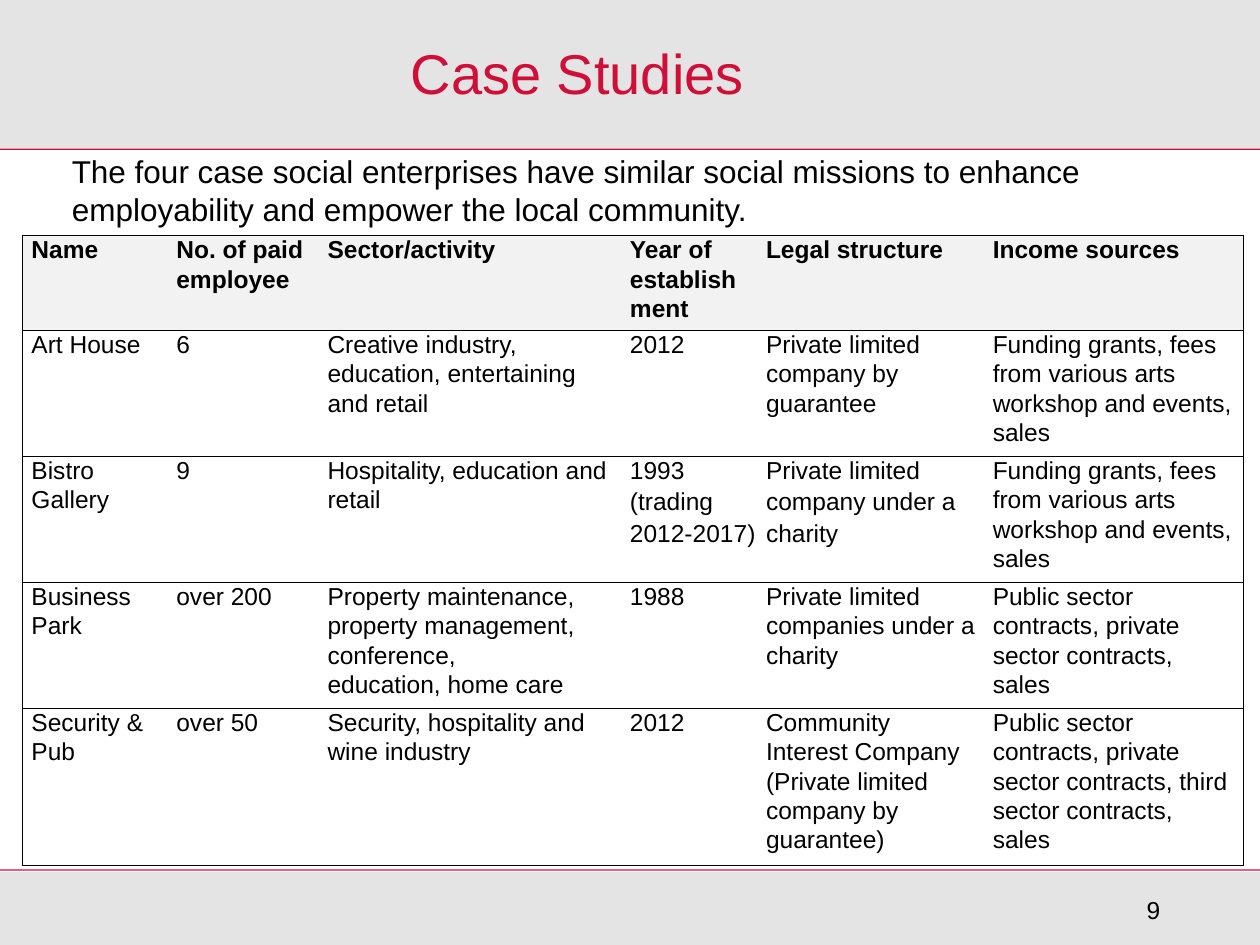
from lxml.etree import SubElement
from pptx import Presentation
from pptx.dml.color import RGBColor
from pptx.enum.shapes import MSO_SHAPE
from pptx.oxml.ns import qn
from pptx.util import Inches, Pt

COLORS = {"band": "E4E4E4", "red": "D00F39", "head": "F2F2F2", "text": "000000"}
WIDTHS = [1.09, 1.23, 2.4, 1.13, 1.77, 2.07]
HEIGHTS = [0.75, 1, 1, 1, 1.25]
LEFT_PADS = [0.07, 0.13, 0.1, 0.1, 0.05, 0.08]
RIGHT_PADS = [0, 0, 0.05, 0, 0, 0]
LOOSE = {(2, 3), (2, 4)}  # cells with wider line spacing
GRANTS = "Funding grants, fees\nfrom various arts workshop and events, sales"
# "\n" starts a paragraph, "\v" breaks a line
ROWS = [
    ["Name", "No. of paid\nemployee", "Sector/activity",
     "Year of\nestablish\vment", "Legal structure", "Income sources"],
    ["Art House", "6", "Creative industry,\neducation, entertaining and retail",
     "2012", "Private limited\ncompany by guarantee", GRANTS],
    ["Bistro\nGallery", "9", "Hospitality, education and\nretail",
     "1993\n(trading 2012-2017)", "Private limited\ncompany under a charity", GRANTS],
    ["Business\nPark", "over 200",
     "Property maintenance,\nproperty management,\vconference,\veducation, home care",
     "1988", "Private limited\ncompanies under a charity",
     "Public sector\ncontracts, private sector contracts,\vsales"],
    ["Security &\nPub", "over 50", "Security, hospitality and\nwine industry",
     "2012", "Community\nInterest Company (Private limited company by guarantee)",
     "Public sector\ncontracts, private sector contracts, third sector contracts,\vsales"],
]


def color(name):
    return RGBColor.from_string(COLORS[name])


def add_bar(slide, top, height, fill):
    bar = slide.shapes.add_shape(
        MSO_SHAPE.RECTANGLE, 0, Inches(top), Inches(10), Inches(height))
    bar.shadow.inherit = False
    bar.fill.solid()
    bar.fill.fore_color.rgb = color(fill)
    bar.line.fill.background()


def set_font(para, size, name="text", bold=False):
    font = para.font
    font.name, font.size, font.bold = "Arial", Pt(size), bold
    font.color.rgb = color(name)


def add_text(slide, text, box, size, name="text", wrap=True):
    frame = slide.shapes.add_textbox(*map(Inches, box)).text_frame
    frame.word_wrap = wrap
    frame.margin_left = frame.margin_right = frame.margin_bottom = 0
    frame.margin_top = Inches(0.01)
    frame.text = text
    set_font(frame.paragraphs[0], size, name)


def set_edges(cell, shown):
    """Draw the cell borders whose letters are in shown; hide the others."""
    props = cell._tc.get_or_add_tcPr()
    for side in "LRTB":
        line = SubElement(props, qn(f"a:ln{side}"), w=str(Pt(0.75)))
        if side in shown:
            fill = SubElement(line, qn("a:solidFill"))
            SubElement(fill, qn("a:srgbClr"), val=COLORS["text"])
        else:
            SubElement(line, qn("a:noFill"))


def fill_cell(cell, text, row, col):
    cell.margin_top = cell.margin_bottom = 0
    cell.margin_left = Inches(LEFT_PADS[col])
    cell.margin_right = Inches(RIGHT_PADS[col])
    cell.text_frame.text = text
    for i, para in enumerate(cell.text_frame.paragraphs):
        rest = 18 if (row, col) in LOOSE else 16.75
        para.line_spacing = Pt(rest if i else 16.3)
        set_font(para, 14, bold=row == 0)
    last = len(WIDTHS) - 1
    set_edges(cell, "TB" + ("L" if col == 0 else "R" if col == last else ""))
    if row == 0:
        cell.fill.solid()
        cell.fill.fore_color.rgb = color("head")
    else:
        cell.fill.background()


def add_cases(slide):
    table = slide.shapes.add_table(
        len(ROWS), len(WIDTHS), Inches(0.18), Inches(1.87),
        Inches(sum(WIDTHS)), Inches(sum(HEIGHTS))).table
    table.first_row = table.horz_banding = False
    for col, width in zip(table.columns, WIDTHS):
        col.width = Inches(width)
    for row, height in zip(table.rows, HEIGHTS):
        row.height = Inches(height)
    for r, texts in enumerate(ROWS):
        for c, text in enumerate(texts):
            fill_cell(table.cell(r, c), text, r, c)


def main():
    deck = Presentation()
    deck.slide_width, deck.slide_height = Inches(10), Inches(7.5)
    slide = deck.slides.add_slide(deck.slide_layouts[6])
    add_bar(slide, 6.92, 0.58, "band")
    add_bar(slide, 0, 1.18, "band")
    for top in (1.18, 6.9):
        add_bar(slide, top, 0.01, "red")
    add_text(slide, "Case Studies", (3.26, 0.3, 2.67, 0.56), 32, "red", wrap=False)
    add_text(slide, "The four case social enterprises have similar social missions "
             "to enhance employability and empower the local community.",
             (0.57, 1.2, 8.03, 0.63), 18)
    add_cases(slide)
    add_text(slide, "9", (9.1, 7.09, 0.26, 0.25), 14)
    deck.save("out.pptx")


if __name__ == "__main__":
    main()
